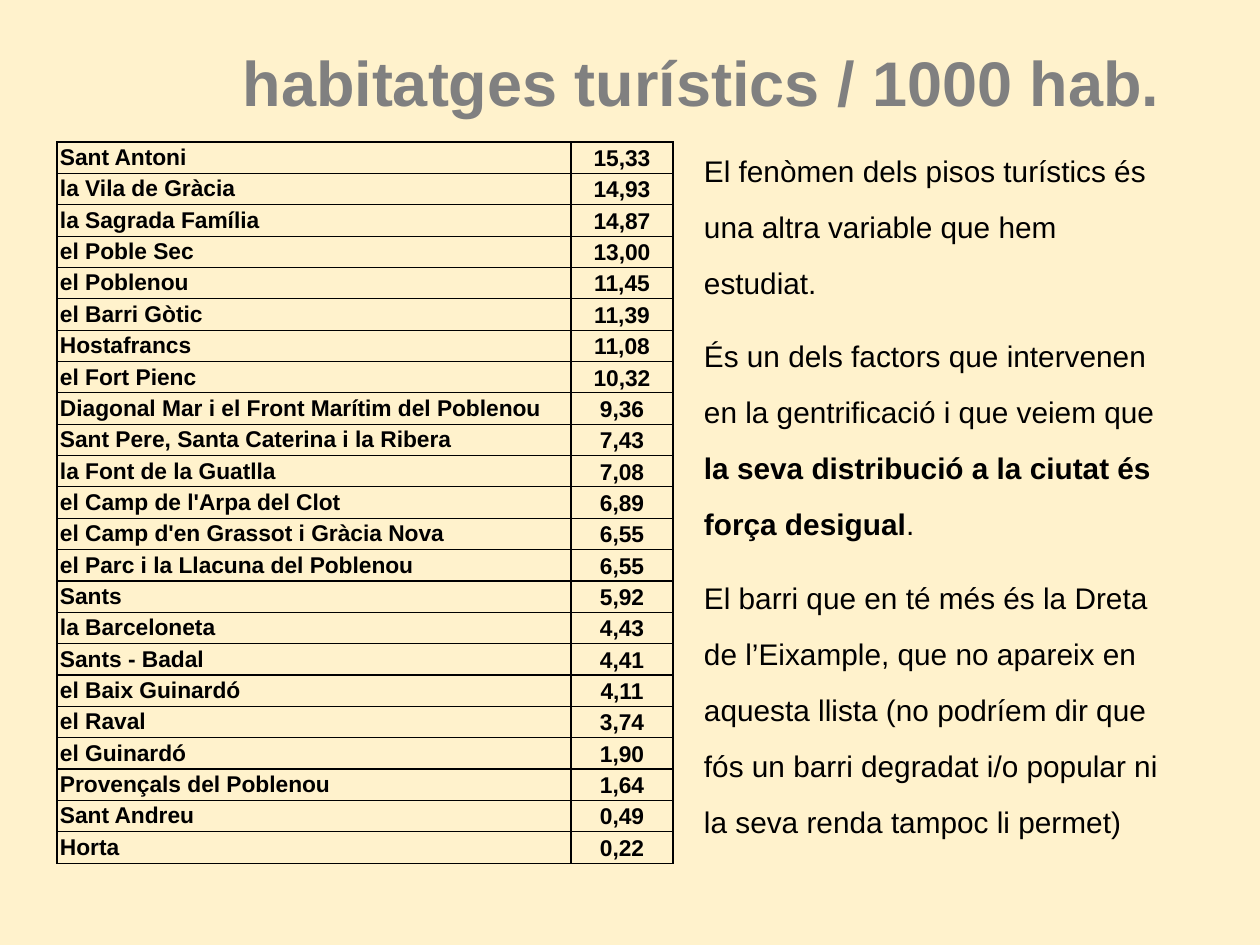
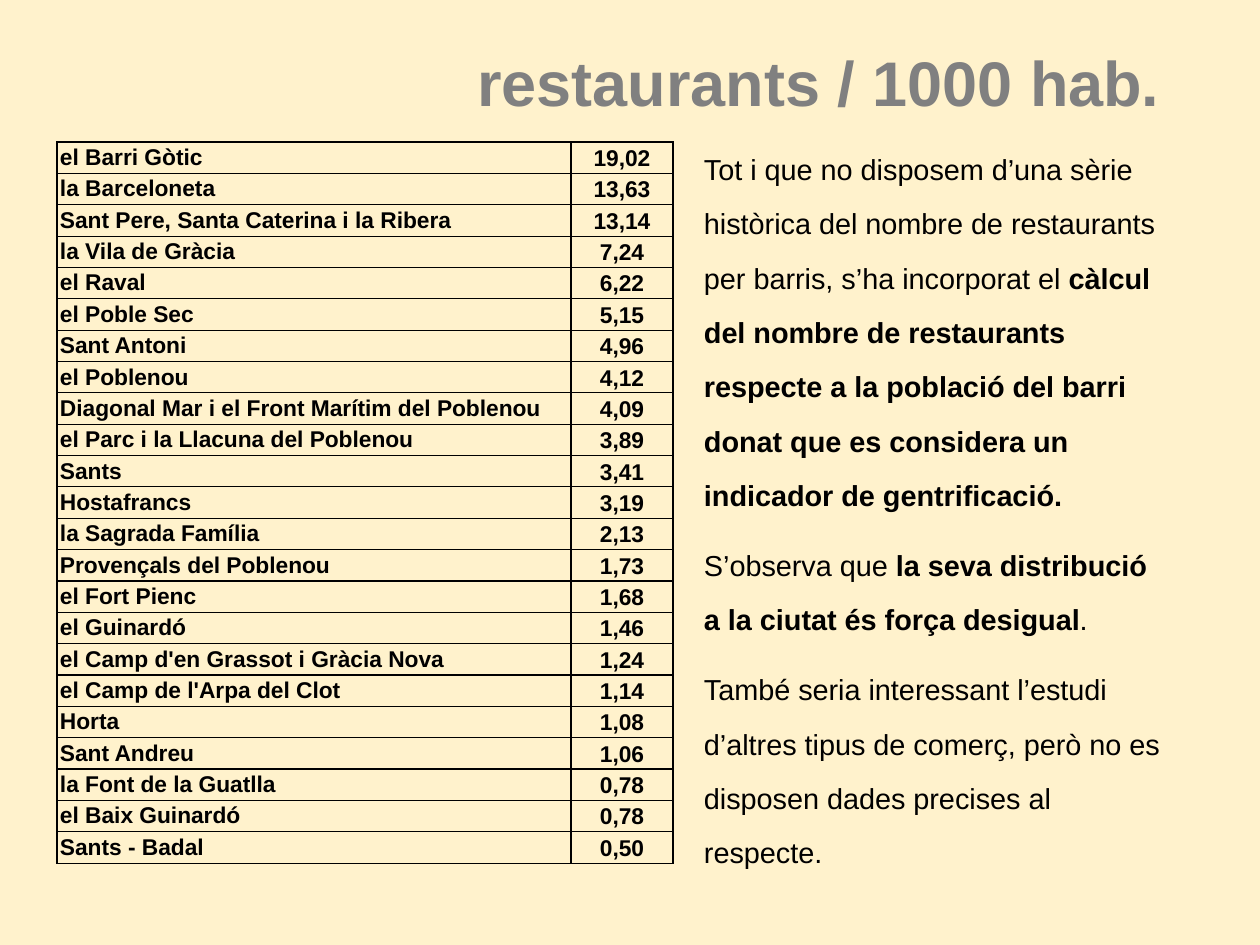
from lxml import etree
from pptx import Presentation, util as u
from pptx.dml.color import RGBColor
from pptx.enum import text as t
from pptx.oxml import ns

SCALE = 914400 / 126  # EMU per px
COLORS = {"paper": "FFF2CC", "title": "808080", "ink": "000000"}
FONT = "Arial"

# Boxes: left, top, width, height
TITLE_BOX = (94, 23, 1072, 103)
COMMENT_BOX = (698, 126, 468, 796)
TABLE_BOX = (57, 142, 616, 720)
VALUE_WIDTH = 102

TOURIST_FLATS = [
    ("Sant Antoni", "15,33"),
    ("la Vila de Gràcia", "14,93"),
    ("la Sagrada Família", "14,87"),
    ("el Poble Sec", "13,00"),
    ("el Poblenou", "11,45"),
    ("el Barri Gòtic", "11,39"),
    ("Hostafrancs", "11,08"),
    ("el Fort Pienc", "10,32"),
    ("Diagonal Mar i el Front Marítim del Poblenou", "9,36"),
    ("Sant Pere, Santa Caterina i la Ribera", "7,43"),
    ("la Font de la Guatlla", "7,08"),
    ("el Camp de l'Arpa del Clot", "6,89"),
    ("el Camp d'en Grassot i Gràcia Nova", "6,55"),
    ("el Parc i la Llacuna del Poblenou", "6,55"),
    ("Sants", "5,92"),
    ("la Barceloneta", "4,43"),
    ("Sants - Badal", "4,41"),
    ("el Baix Guinardó", "4,11"),
    ("el Raval", "3,74"),
    ("el Guinardó", "1,90"),
    ("Provençals del Poblenou", "1,64"),
    ("Sant Andreu", "0,49"),
    ("Horta", "0,22"),
]
RESTAURANTS = [
    ("el Barri Gòtic", "19,02"),
    ("la Barceloneta", "13,63"),
    ("Sant Pere, Santa Caterina i la Ribera", "13,14"),
    ("la Vila de Gràcia", "7,24"),
    ("el Raval", "6,22"),
    ("el Poble Sec", "5,15"),
    ("Sant Antoni", "4,96"),
    ("el Poblenou", "4,12"),
    ("Diagonal Mar i el Front Marítim del Poblenou", "4,09"),
    ("el Parc i la Llacuna del Poblenou", "3,89"),
    ("Sants", "3,41"),
    ("Hostafrancs", "3,19"),
    ("la Sagrada Família", "2,13"),
    ("Provençals del Poblenou", "1,73"),
    ("el Fort Pienc", "1,68"),
    ("el Guinardó", "1,46"),
    ("el Camp d'en Grassot i Gràcia Nova", "1,24"),
    ("el Camp de l'Arpa del Clot", "1,14"),
    ("Horta", "1,08"),
    ("Sant Andreu", "1,06"),
    ("la Font de la Guatlla", "0,78"),
    ("el Baix Guinardó", "0,78"),
    ("Sants - Badal", "0,50"),
]

# Comments: ** switches bold on and off
FLATS_COMMENT = [
    "El fenòmen dels pisos turístics és una altra variable que hem estudiat.",
    "És un dels factors que intervenen en la gentrificació i que veiem que "
    "**la seva distribució a la ciutat és força desigual**.",
    "El barri que en té més és la Dreta de l’Eixample, que no apareix en "
    "aquesta llista (no podríem dir que fós un barri degradat i/o popular ni "
    "la seva renda tampoc li permet)",
]
RESTAURANTS_COMMENT = [
    "Tot i que no disposem d’una sèrie històrica del nombre de restaurants "
    "per barris, s’ha incorporat el **càlcul del nombre de restaurants "
    "respecte a la població del barri donat que es considera un indicador "
    "de gentrificació.**",
    "S’observa que **la seva distribució a la ciutat és força desigual**.",
    "També seria interessant l’estudi d’altres tipus de comerç, però no es "
    "disposen dades precises al respecte.",
]


def px(length):
    return u.Emu(round(length * SCALE))


def set_font(paragraph, size, color, bold=None):
    font = paragraph.font
    font.name, font.size, font.bold = FONT, u.Pt(size), bold
    font.color.rgb = RGBColor.from_string(COLORS[color])


def add_text_frame(slide, box):
    frame = slide.shapes.add_textbox(*map(px, box)).text_frame
    frame.word_wrap = True
    frame.margin_left = frame.margin_right = px(6)
    frame.margin_top = frame.margin_bottom = px(6)
    return frame


def add_title(slide, box, title):
    frame = add_text_frame(slide, box)
    frame.vertical_anchor = t.MSO_ANCHOR.BOTTOM
    heading = frame.paragraphs[0]
    heading.text = title
    heading.alignment = t.PP_ALIGN.RIGHT
    heading.line_spacing = 0.9
    set_font(heading, 36, "title", True)


def add_comment(slide, box, comment, size, gap):
    frame = add_text_frame(slide, box)
    for i, words in enumerate(comment):
        paragraph = frame.add_paragraph() if i else frame.paragraphs[0]
        paragraph.line_spacing = 1.57
        if i:
            paragraph.space_before = u.Pt(gap)
        set_font(paragraph, size, "ink")
        for j, part in enumerate(words.split("**")):
            if part:
                run = paragraph.add_run()
                run.text = part
                if j % 2:
                    run.font.bold = True


def add_borders(cell):
    properties = cell._tc.get_or_add_tcPr()
    for i, side in enumerate(("lnL", "lnR", "lnT", "lnB")):
        line = etree.Element(ns.qn(f"a:{side}"), w=str(u.Pt(0.75)))
        fill = etree.SubElement(line, ns.qn("a:solidFill"))
        etree.SubElement(fill, ns.qn("a:srgbClr"), val=COLORS["ink"])
        properties.insert(i, line)


def add_ranking(slide, box, ranking):
    left, top, width, height = box
    table = slide.shapes.add_table(len(ranking), 2, *map(px, box)).table
    table.first_row = table.horz_banding = False
    table.columns[0].width = px(width - VALUE_WIDTH)
    table.columns[1].width = px(VALUE_WIDTH)
    styles = ((t.MSO_ANCHOR.MIDDLE, t.PP_ALIGN.LEFT),
              (t.MSO_ANCHOR.BOTTOM, t.PP_ALIGN.CENTER))
    for row, entry in zip(table.rows, ranking):
        row.height = px(height / len(ranking))
        for cell, words, (anchor, alignment) in zip(row.cells, entry, styles):
            cell.margin_left = cell.margin_right = px(3)
            cell.margin_top = cell.margin_bottom = px(2)
            cell.vertical_anchor = anchor
            cell.fill.background()
            add_borders(cell)
            paragraph = cell.text_frame.paragraphs[0]
            paragraph.text = words
            paragraph.alignment = alignment
            set_font(paragraph, 13, "ink", True)


def add_indicator_slide(prs, title, ranking, comment, size, gap):
    slide = prs.slides.add_slide(prs.slide_layouts[6])
    background = slide.background.fill
    background.solid()
    background.fore_color.rgb = RGBColor.from_string(COLORS["paper"])
    add_title(slide, TITLE_BOX, title)
    add_comment(slide, COMMENT_BOX, comment, size, gap)
    add_ranking(slide, TABLE_BOX, ranking)


def main():
    prs = Presentation()
    prs.slide_width, prs.slide_height = px(1260), px(945)
    add_indicator_slide(prs, "habitatges turístics / 1000 hab.",
                        TOURIST_FLATS, FLATS_COMMENT, 17, 10)
    add_indicator_slide(prs, "restaurants / 1000 hab.",
                        RESTAURANTS, RESTAURANTS_COMMENT, 16.5, 9)
    prs.save("out.pptx")


if __name__ == "__main__":
    main()
